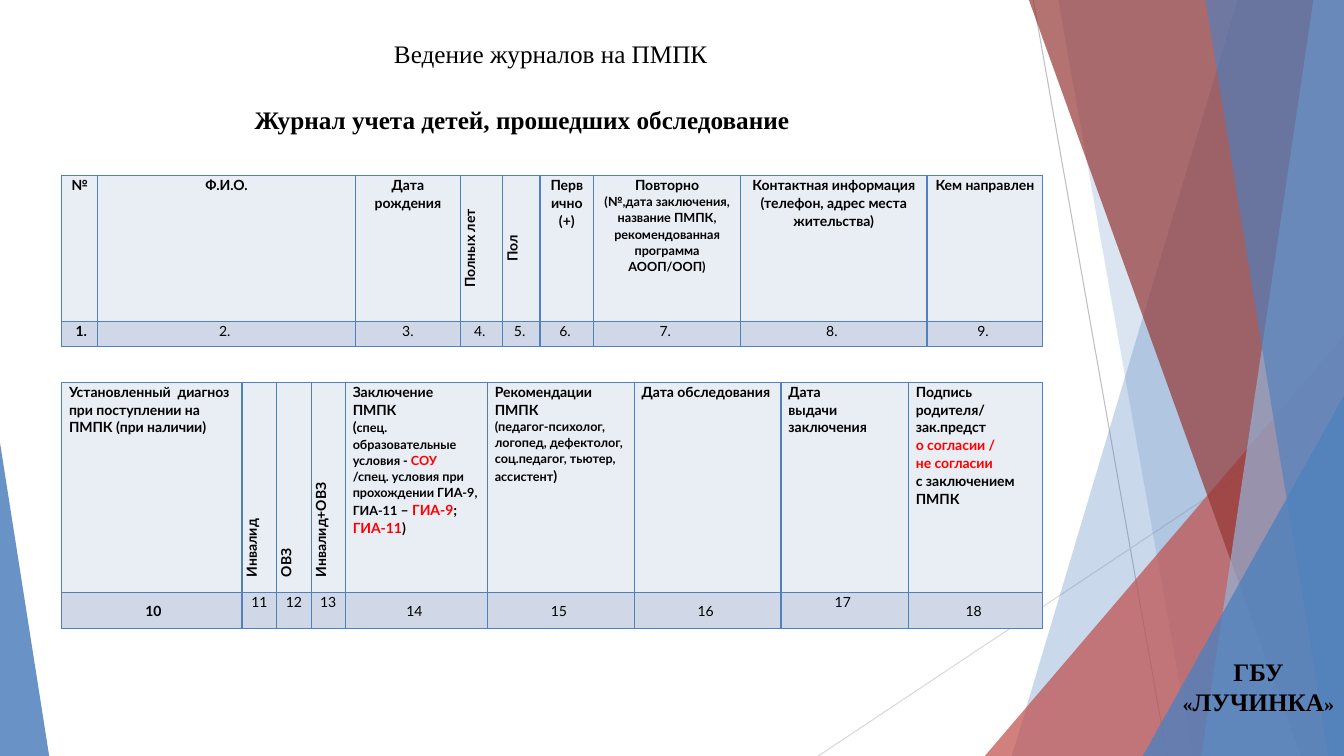
from lxml.etree import SubElement
from pptx import Presentation
from pptx.dml.color import RGBColor
from pptx.enum.shapes import MSO_CONNECTOR, MSO_SHAPE
from pptx.enum.text import MSO_ANCHOR, MSO_AUTO_SIZE, PP_ALIGN
from pptx.oxml.ns import qn
from pptx.util import Cm, Pt

WIDTH, HEIGHT = 33.87, 19.05
COLORS = {
    "blue": "4F81BD", "red": "C0504D", "dark_red": "953735",
    "light_blue": "95B3D7", "gray": "BFBFBF", "light_gray": "D9D9D9",
    "head": "E9EDF4", "band": "D0D8E8", "black": "000000", "accent": "FF0000",
}
TITLE_FONT, TABLE_FONT = "Times New Roman", "Lato"

FACETS = [
    (31.19, 25.5, "blue", 30),
    (26.67, 30.05, "blue", 20),
    (25.93, 32.79, "dark_red", 70),
    (33.1, 30.28, "light_blue", 70),
    (30.38, 33.48, "blue", 65),
]

CHILD_WIDTHS = [0.91, 6.5, 2.64, 1.07, 0.94, 1.35, 3.7, 4.7, 2.92]
CHILD_HEADS = [
    ["№"], ["Ф.И.О."], ["Дата рождения"], ["Полных лет"], ["Пол"],
    ["Первично", "(+)"],
    ["Повторно", [("(№,дата заключения, название ПМПК, рекомендованная программа АООП/ООП)", 9)]],
    ["Контактная информация", "(телефон, адрес места жительства)"],
    ["Кем направлен"],
]
CHILD_NUMBERS = ["\u00a01."] + ["2.\u00a0", "3."] + [f"{n}.\u00a0" for n in range(4, 10)]

RESULT_WIDTHS = [4.55, 0.87, 0.87, 0.86, 3.58, 3.7, 3.7, 3.21, 3.39]
RESULT_HEADS = [
    ["Установленный  диагноз при поступлении на ПМПК (при наличии)"],
    ["Инвалид"], ["ОВЗ"], ["Инвалид+ОВЗ"],
    ["Заключение ПМПК",
     [("(",), ("спец. образовательные условия - ", 9), ("СОУ", 9, "accent")],
     [("/спец. условия при прохождении ГИА-9, ГИА-11", 9), (" – ",),
      ("ГИА-9", 10, "accent"), ("; ",), (" ", 9),
      ("ГИА-11", 10, "accent"), (")",)]],
    ["Рекомендации ПМПК",
     [("(педагог-психолог, логопед, дефектолог, соц.педагог, тьютер, ассистент", 9), (")",)]],
    ["Дата обследования"],
    ["Дата", "выдачи заключения"],
    ["Подпись родителя/ зак.предст", [("о согласии /", 10, "accent")],
     [("не согласии", 10, "accent")], "с заключением ПМПК"],
]
RESULT_NUMBERS = ["\u00a010"] + [f"{n}\u00a0" for n in range(11, 19)]


def rgb(name):
    return RGBColor.from_string(COLORS[name])


def paint(shape, color, opacity):
    shape.shadow.inherit = False
    shape.fill.solid()
    shape.fill.fore_color.rgb = rgb(color)
    shape.line.fill.background()
    fill_color = shape.fill._xPr.find(qn("a:solidFill"))[0]
    SubElement(fill_color, qn("a:alpha"), val=str(opacity * 1000))


def add_line(slide, start, end, color):
    points = [Cm(value) for value in (*start, *end)]
    line = slide.shapes.add_connector(MSO_CONNECTOR.STRAIGHT, *points)
    line.line.color.rgb = rgb(color)
    line.line.width = Pt(0.75)
    SubElement(line._element.spPr, qn("a:effectLst"))


def add_facet(slide, top_x, bottom_x, color, opacity):
    builder = slide.shapes.build_freeform(Cm(top_x), 0)
    corners = [(WIDTH, 0), (WIDTH, HEIGHT), (bottom_x, HEIGHT)]
    builder.add_line_segments([(Cm(x), Cm(y)) for x, y in corners])
    paint(builder.convert_to_shape(), color, opacity)


def add_triangle(slide, left, top, width, apex, color, opacity):
    shape = slide.shapes.add_shape(MSO_SHAPE.ISOSCELES_TRIANGLE, Cm(left), Cm(top),
                                   Cm(width), Cm(HEIGHT - top))
    shape.adjustments[0] = apex
    paint(shape, color, opacity)


def add_run(paragraph, text, size, color="black", font=TABLE_FONT, bold=True):
    run = paragraph.add_run()
    run.text = text
    run.font.size = Pt(size)
    run.font.name = font
    run.font.bold = bold
    run.font.color.rgb = rgb(color)
    return run


def add_title(slide, text, left, top, width, height, bold=True, wrap=False):
    box = slide.shapes.add_textbox(Cm(left), Cm(top), Cm(width), Cm(height))
    frame = box.text_frame
    frame.word_wrap = wrap
    frame.auto_size = MSO_AUTO_SIZE.SHAPE_TO_FIT_TEXT
    paragraph = frame.paragraphs[0]
    return paragraph, add_run(paragraph, text, 18, font=TITLE_FONT, bold=bold)


def style_cell(cell, fill, vertical=False, middle=False):
    cell.margin_left = cell.margin_right = Cm(0.19)
    cell.margin_top = cell.margin_bottom = 0
    cell.vertical_anchor = MSO_ANCHOR.MIDDLE if middle else MSO_ANCHOR.TOP
    properties = cell._tc.get_or_add_tcPr()
    if vertical:
        properties.set("vert", "vert270")
    for side in ("lnL", "lnR", "lnT", "lnB"):
        border = SubElement(properties, qn(f"a:{side}"), w=str(Pt(1)))
        solid = SubElement(border, qn("a:solidFill"))
        SubElement(solid, qn("a:srgbClr"), val=COLORS["blue"])
    cell.fill.solid()
    cell.fill.fore_color.rgb = rgb(fill)


def fill_cell(cell, paragraphs, align, bold=True, vertical=False):
    frame = cell.text_frame
    for index, content in enumerate(paragraphs):
        paragraph = frame.add_paragraph() if index else frame.paragraphs[0]
        paragraph.alignment = align
        paragraph.line_spacing = 1.07
        if vertical:
            for side in ("marL", "marR"):
                paragraph._p.get_or_add_pPr().set(side, str(Cm(0.2)))
        runs = [(content,)] if isinstance(content, str) else content
        for text, *style in runs:
            size = style[0] if style else 10
            color = style[1] if len(style) > 1 else "black"
            add_run(paragraph, text, size, color, bold=bold)


def add_journal(slide, top, widths, heights, heads, numbers, align, vertical, middle):
    frame = slide.shapes.add_table(2, len(widths), Cm(1.55), Cm(top),
                                   Cm(sum(widths)), Cm(sum(heights)))
    table = frame.table
    table.first_row = table.horz_banding = False
    for row, height in zip(table.rows, heights):
        row.height = Cm(height)
    for index, (width, head, number) in enumerate(zip(widths, heads, numbers)):
        table.columns[index].width = Cm(width)
        turned = index in vertical
        style_cell(table.cell(0, index), "head", vertical=turned)
        fill_cell(table.cell(0, index), head, align, vertical=turned)
        style_cell(table.cell(1, index), "band", middle=index in middle)
        fill_cell(table.cell(1, index), [number], PP_ALIGN.CENTER, bold=index == 0)


def add_background(slide):
    add_line(slide, (26.04, 0), (29.41, HEIGHT), "gray")
    add_line(slide, (WIDTH, 10.24), (20.62, HEIGHT), "light_gray")
    for facet in FACETS[:2]:
        add_facet(slide, *facet)
    add_triangle(slide, 24.82, 8.46, 9.05, 1, "red", 72)
    for facet in FACETS[2:]:
        add_facet(slide, *facet)
    add_triangle(slide, 28.8, 9.98, 5.07, 1, "blue", 80)
    add_triangle(slide, 0, 11.15, 1.24, 0, "blue", 85)


def main():
    presentation = Presentation()
    presentation.slide_width, presentation.slide_height = Cm(WIDTH), Cm(HEIGHT)
    slide = presentation.slides.add_slide(presentation.slide_layouts[6])
    add_background(slide)
    paragraph, run = add_title(slide, "ГБУ «ЛУЧИНКА»", 29.34, 16.41, 4.75, 1.8, wrap=True)
    paragraph.alignment = PP_ALIGN.CENTER
    run._r.get_or_add_rPr().set("cap", "small")
    add_title(slide, "Ведение журналов на ПМПК", 9.68, 0.84, 8.48, 1.02, bold=False)
    add_journal(slide, 4.42, CHILD_WIDTHS, (3.68, 0.63), CHILD_HEADS, CHILD_NUMBERS,
                PP_ALIGN.CENTER, vertical={3, 4}, middle=set())
    add_journal(slide, 9.63, RESULT_WIDTHS, (5.3, 0.9), RESULT_HEADS, RESULT_NUMBERS,
                PP_ALIGN.LEFT, vertical={1, 2, 3}, middle={0, 1, 4, 5, 6, 8})
    add_title(slide, "Журнал учета детей, прошедших обследование", 6.17, 2.5, 14.3, 1.02)
    presentation.save("out.pptx")


if __name__ == "__main__":
    main()
